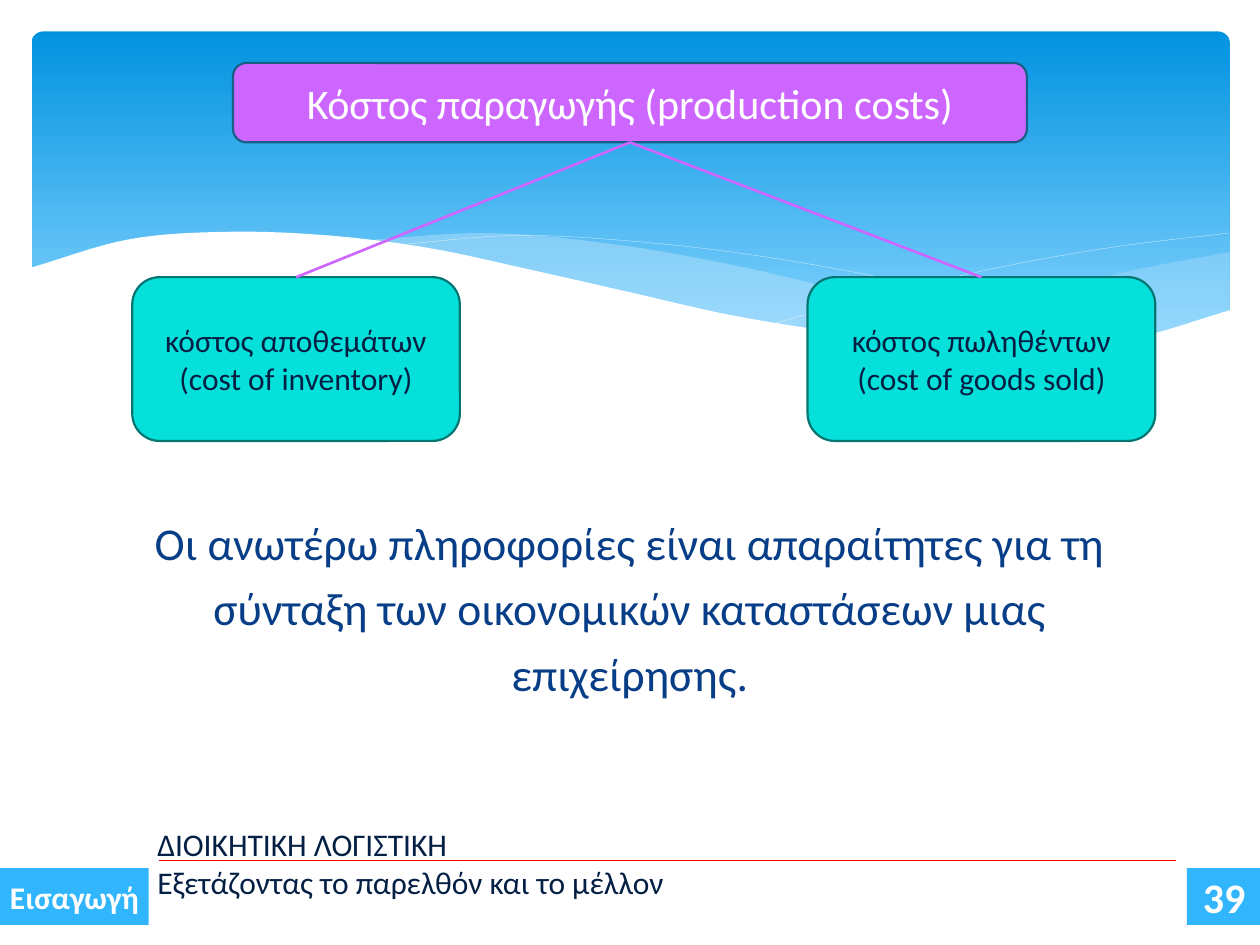
"""Build the production costs slide with its wave banner, cost tree and footer."""
from dataclasses import dataclass
from lxml import etree
from pptx import Presentation
from pptx.dml.color import RGBColor
from pptx.enum.shapes import MSO_CONNECTOR, MSO_SHAPE
from pptx.enum.text import MSO_ANCHOR, PP_ALIGN
from pptx.oxml.ns import qn
from pptx.util import Inches, Pt

RECT, ROUND = MSO_SHAPE.RECTANGLE, MSO_SHAPE.ROUNDED_RECTANGLE
LINE, MIDDLE = MSO_CONNECTOR.STRAIGHT, MSO_ANCHOR.MIDDLE
LEFT, CENTER = PP_ALIGN.LEFT, PP_ALIGN.CENTER
BOTTOM_SIDE, TOP_SIDE = 2, 0
STEPS = 8


@dataclass(frozen=True)
class Theme:
    font: str = "Calibri"
    white: str = "FFFFFF"
    top: str = "0293E0"
    low: str = "83D3FE"
    mist: str = "C6E7FC"
    sky: str = "31B6FD"
    red: str = "FF0000"
    violet: str = "CC66FF"
    steel: str = "195F84"
    teal: str = "05E0DB"
    pine: str = "037572"
    ink: str = "041F44"
    navy: str = "073E87"
    small: int = 18
    head: int = 24
    body: int = 26


theme = Theme()
rgb = RGBColor.from_string
deck = Presentation()
deck.slide_width, deck.slide_height = Inches(10), Inches(7.5)
slide = deck.slides.add_slide(deck.slide_layouts[6])
shapes = slide.shapes


def write(shape, text, size, color, align=CENTER, bold=False):
    frame = shape.text_frame
    frame.word_wrap = True
    frame.text = text
    for para in frame.paragraphs:
        para.alignment = align
        for run in para.runs:
            run.font.name, run.font.size = theme.font, Pt(size)
            run.font.bold, run.font.color.rgb = bold, rgb(color)
    return frame


def block(kind, place, fill, edge=None):
    shape = shapes.add_shape(kind, *map(Inches, place))
    shape.shadow.inherit = False
    shape.fill.solid()
    shape.fill.fore_color.rgb = rgb(fill)
    if edge:
        shape.line.color.rgb, shape.line.width = rgb(edge), Pt(1.25)
    else:
        shape.line.fill.background()
    shape.text_frame.vertical_anchor = MIDDLE
    return shape


banner = block(ROUND, (0.25, 0.25, 9.51, 2.7), theme.top)
banner.adjustments[0] = 0.034
banner.fill.gradient()
banner.fill.gradient_angle = 270
for stop, (spot, color) in zip(banner.fill.gradient_stops, ((0, theme.top), (0.9, theme.low))):
    stop.position, stop.color.rgb = spot, rgb(color)

right = ((9.76, 6.61, (2, 2.15, 2.34, 2.51, 2.65)),
         (6.61, 9.76, (2.65, 2.75, 2.78, 2.7, 2.47)))
middle = ((8.93, 2.86, (2.73, 2.57, 2.36, 2.12, 1.94, 1.85, 1.91)),
          (2.86, 8.93, (1.91, 2.08, 2.31, 2.53, 2.7, 2.78, 2.73)))
crest = ((3.09, 9.07, (1.95, 1.87, 1.92, 2.04, 2.22, 2.45, 2.72)),)
rise = ((6.13, 9.75, (2.57, 2.33, 2.12, 1.96, 1.85)),)
front = ((9.77, 0.23, (2.46, 2.69, 2.77, 2.73, 2.63, 2.5, 2.32,
                       2.14, 1.97, 1.87, 1.84, 1.9, 2.13)),
         (0.23, 9.77, (3.29, 3.29)))

waves = ((right, theme.mist, 29), (middle, theme.mist, 40), (crest, None, 0),
         (rise, None, 0), (front, theme.white, 100))
for edges, fill, alpha in waves:
    points = []
    for begin, end, knots in edges:
        spans = len(knots) - 1
        padded = (2 * knots[0] - knots[1], *knots, 2 * knots[-1] - knots[-2])
        for tick in range(spans * STEPS + 1):
            span = min(tick // STEPS, spans - 1)
            t = tick / STEPS - span
            a, b, c, d = padded[span:span + 4]
            bend = (2 * a - 5 * b + 4 * c - d) * t ** 2 + (3 * b - a - 3 * c + d) * t ** 3
            x = begin + (end - begin) * tick / (spans * STEPS)
            y = b + ((c - a) * t + bend) / 2
            points.append((Inches(x), Inches(y)))
    pen = shapes.build_freeform(*points[0])
    pen.add_line_segments(points[1:], close=fill is not None)
    wave = pen.convert_to_shape()
    wave.shadow.inherit = False
    if fill:
        wave.fill.solid()
        wave.fill.fore_color.rgb = rgb(fill)
        wave.line.fill.background()
        tint = wave._element.spPr.find(qn("a:solidFill"))[0]
        etree.SubElement(tint, qn("a:alpha"), val=str(alpha * 1000))
    else:
        wave.fill.background()
        wave.line.color.rgb, wave.line.width = rgb(theme.white), Pt(0.1)

page = block(RECT, (9.42, 6.89, 0.59, 0.45), theme.sky)
write(page, "39", theme.head, theme.white, bold=True)
tag = block(RECT, (0, 6.89, 1.18, 0.45), theme.sky)
frame = write(tag, "Εισαγωγή", theme.small, theme.white, bold=True)
frame.margin_left = frame.margin_right = 0

rule = shapes.add_connector(LINE, Inches(1.26), Inches(6.83), Inches(9.33), Inches(6.83))
foot = shapes.add_textbox(Inches(1.15), Inches(6.5), Inches(8.27), Inches(0.71))
write(foot, "ΔΙΟΙΚΗΤΙΚΗ ΛΟΓΙΣΤΙΚΗ\nΕξετάζοντας το παρελθόν και το μέλλον",
      theme.small, theme.ink, LEFT)

root = block(ROUND, (1.85, 0.5, 6.3, 0.63), theme.violet, theme.steel)
write(root, "Κόστος παραγωγής (production costs)", theme.head, theme.white)

links = [(rule, theme.red, 0.75)]
costs = ((1.05, 2.6, "κόστος αποθεμάτων\n(cost of inventory)"),
         (6.41, 2.76, "κόστος πωληθέντων\n(cost of goods sold)"))
for left, width, text in costs:
    box = block(ROUND, (left, 2.2, width, 1.3), theme.teal, theme.pine)
    write(box, text, theme.small, theme.ink)
    link = shapes.add_connector(LINE, 0, 0, 0, 0)
    link.begin_connect(root, BOTTOM_SIDE)
    link.end_connect(box, TOP_SIDE)
    links.append((link, theme.violet, 1.5))

for link, color, width in links:
    link.line.color.rgb, link.line.width = rgb(color), Pt(width)
    etree.SubElement(link._element.spPr, qn("a:effectLst"))

note = shapes.add_textbox(Inches(0.67), Inches(3.95), Inches(8.66), Inches(1.64))
frame = write(note, "Οι ανωτέρω πληροφορίες είναι απαραίτητες για τη σύνταξη των "
              "οικονομικών καταστάσεων μιας επιχείρησης.", theme.body, theme.navy)
frame.paragraphs[0].line_spacing = 1.2
frame.paragraphs[0].space_before = Pt(6)

deck.save("out.pptx")
